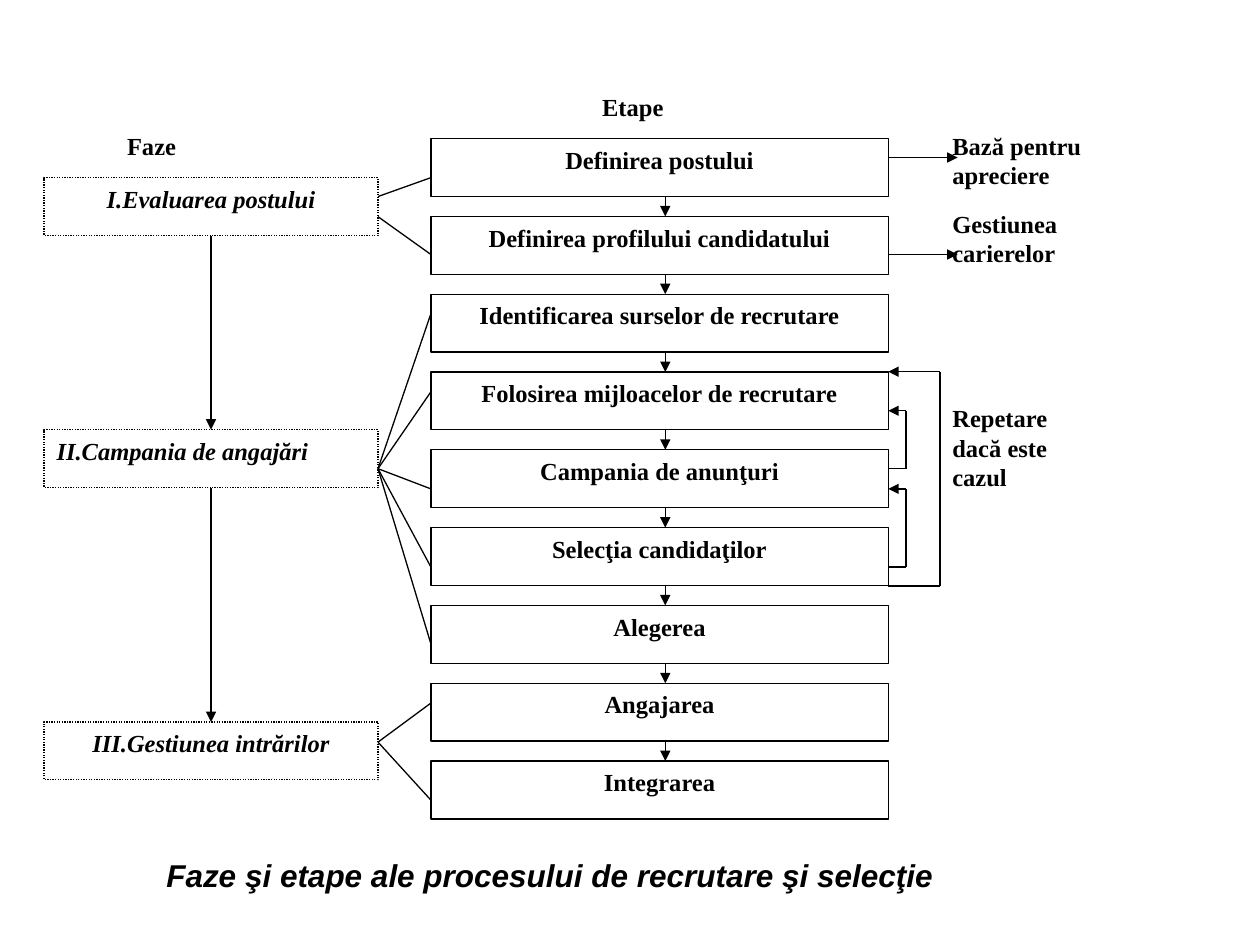
from dataclasses import dataclass
from itertools import pairwise

from pptx import Presentation
from pptx import util as u
from pptx.dml.color import RGBColor
from pptx.enum import dml, shapes, text
from pptx.oxml.ns import qn
from lxml import etree

BLACK, WHITE = "000000", "FFFFFF"
LEFT, CENTER = text.PP_ALIGN.LEFT, text.PP_ALIGN.CENTER
BOX_HEIGHT = 0.46
PHASE_LEFT, PHASE_WIDTH = 0.35, 2.65
STEP_LEFT, STEP_WIDTH = 3.42, 3.63
PHASE_RIGHT, STEP_RIGHT = PHASE_LEFT + PHASE_WIDTH, STEP_LEFT + STEP_WIDTH
FIRST_STEP, LAST_STEP = 1.10, 6.04
STEP_ARROW_X = 5.28


@dataclass
class Label:
    wording: str
    left: float
    top: float
    width: float
    height: float


@dataclass
class Phase:
    wording: str
    top: float
    branches: list[tuple[float, float]]  # height at the phase, height at the step
    align: text.PP_ALIGN = CENTER


@dataclass
class Loop:
    start: float
    end: float
    right: float


LABELS = [
    Label("Repetare dacă este cazul", 7.46, 3.15, 1.12, 1.08),
    Label("Gestiunea carierelor", 7.46, 1.61, 1.39, 0.77),
    Label("Bază pentru apreciere", 7.46, 0.99, 1.26, 0.62),
    Label("Etape", 4.68, 0.68, 1.39, 0.46),
    Label("Faze", 0.91, 0.99, 1.39, 0.46),
]
STEPS = [
    "Definirea postului",
    "Definirea profilului candidatului",
    "Identificarea surselor de recrutare",
    "Folosirea mijloacelor de recrutare",
    "Campania de anunţuri",
    "Selecţia candidaţilor",
    "Alegerea",
    "Angajarea",
    "Integrarea",
]
PHASES = [
    Phase("I.Evaluarea postului", 1.41, [(1.56, 1.41), (1.72, 2.02)]),
    Phase("II.Campania de angajări", 3.41,
          [(3.72, y) for y in (5.11, 4.50, 3.88, 3.11, 2.49)], LEFT),
    Phase("III.Gestiunea intrărilor", 5.73, [(5.89, 5.58), (5.89, 6.35)]),
]
LOOPS = [Loop(4.50, 3.88, 7.19), Loop(3.72, 3.26, 7.19), Loop(4.65, 2.95, 7.46)]
OUTPUT_HEIGHTS = [1.25, 2.02]


def color(value: str) -> RGBColor:
    return RGBColor.from_string(value)


def style_font(paragraph, name: str, size: float, italic: bool) -> None:
    font = paragraph.font
    font.name, font.size = name, u.Pt(size)
    font.bold, font.italic = True, italic
    font.color.rgb = color(BLACK)


def add_box(slide, label: Label, outline: str = BLACK, align=CENTER,
            dotted: bool = False):
    box = slide.shapes.add_shape(
        shapes.MSO_SHAPE.RECTANGLE, u.Inches(label.left), u.Inches(label.top),
        u.Inches(label.width), u.Inches(label.height))
    box.shadow.inherit = False
    box.fill.solid()
    box.fill.fore_color.rgb = color(WHITE)
    box.line.color.rgb = color(outline)
    box.line.width = u.Pt(0.75)
    if dotted:
        box.line.dash_style = dml.MSO_LINE.ROUND_DOT
    frame = box.text_frame
    frame.word_wrap = True
    frame.vertical_anchor = text.MSO_ANCHOR.TOP
    paragraph = frame.paragraphs[0]
    paragraph.text = label.wording
    paragraph.alignment = align
    style_font(paragraph, "Times New Roman", 14, italic=dotted)
    return box


def add_line(slide, x1: float, y1: float, x2: float, y2: float,
             arrow: bool = False):
    line = slide.shapes.add_connector(
        shapes.MSO_CONNECTOR.STRAIGHT,
        u.Inches(x1), u.Inches(y1), u.Inches(x2), u.Inches(y2))
    line.line.color.rgb = color(BLACK)
    line.line.width = u.Pt(0.75)
    properties = line._element.spPr
    if arrow:
        etree.SubElement(properties.find(qn("a:ln")), qn("a:tailEnd"), type="triangle")
    etree.SubElement(properties, qn("a:effectLst"))
    return line


def add_loop(slide, loop: Loop) -> None:
    add_line(slide, STEP_RIGHT, loop.start, loop.right, loop.start)
    add_line(slide, loop.right, loop.start, loop.right, loop.end)
    add_line(slide, loop.right, loop.end, STEP_RIGHT, loop.end, arrow=True)


def add_title(slide, wording: str) -> None:
    title = slide.shapes.title
    title.left, title.top = u.Inches(1.22), u.Inches(6.74)
    title.width, title.height = u.Inches(7.16), u.Inches(0.4)
    frame = title.text_frame
    frame.word_wrap = True
    frame.auto_size = text.MSO_AUTO_SIZE.NONE
    frame.vertical_anchor = text.MSO_ANCHOR.MIDDLE
    paragraph = frame.paragraphs[0]
    paragraph.text = wording
    paragraph.alignment = LEFT
    style_font(paragraph, "Arial", 18, italic=True)


def main() -> None:
    deck = Presentation()
    deck.slide_width, deck.slide_height = u.Inches(10), u.Inches(7.5)
    slide = deck.slides.add_slide(deck.slide_layouts[5])
    add_title(slide, "Faze şi etape ale procesului de recrutare şi selecţie")

    # Headings and side notes
    for label in LABELS:
        add_box(slide, label, outline=WHITE, align=LEFT)

    # Steps, evenly spaced
    pitch = (LAST_STEP - FIRST_STEP) / (len(STEPS) - 1)
    step_tops = [FIRST_STEP + i * pitch for i in range(len(STEPS))]
    for wording, top in zip(STEPS, step_tops):
        add_box(slide, Label(wording, STEP_LEFT, top, STEP_WIDTH, BOX_HEIGHT))
    for upper, lower in pairwise(step_tops):
        add_line(slide, STEP_ARROW_X, upper + BOX_HEIGHT, STEP_ARROW_X, lower, arrow=True)

    # Phases, with branches to their steps
    phase_boxes = []
    for phase in PHASES:
        area = Label(phase.wording, PHASE_LEFT, phase.top, PHASE_WIDTH, BOX_HEIGHT)
        phase_boxes.append(add_box(slide, area, align=phase.align, dotted=True))
        for phase_y, step_y in phase.branches:
            add_line(slide, PHASE_RIGHT, phase_y, STEP_LEFT, step_y)
    for upper, lower in pairwise(phase_boxes):
        arrow = add_line(slide, 0, 0, 0, 0, arrow=True)
        arrow.begin_connect(upper, 2)
        arrow.end_connect(lower, 0)

    # Repeat loops and outputs
    for loop in LOOPS:
        add_loop(slide, loop)
    for y in OUTPUT_HEIGHTS:
        add_line(slide, STEP_RIGHT, y, 7.6, y, arrow=True)

    deck.save("out.pptx")


if __name__ == "__main__":
    main()
